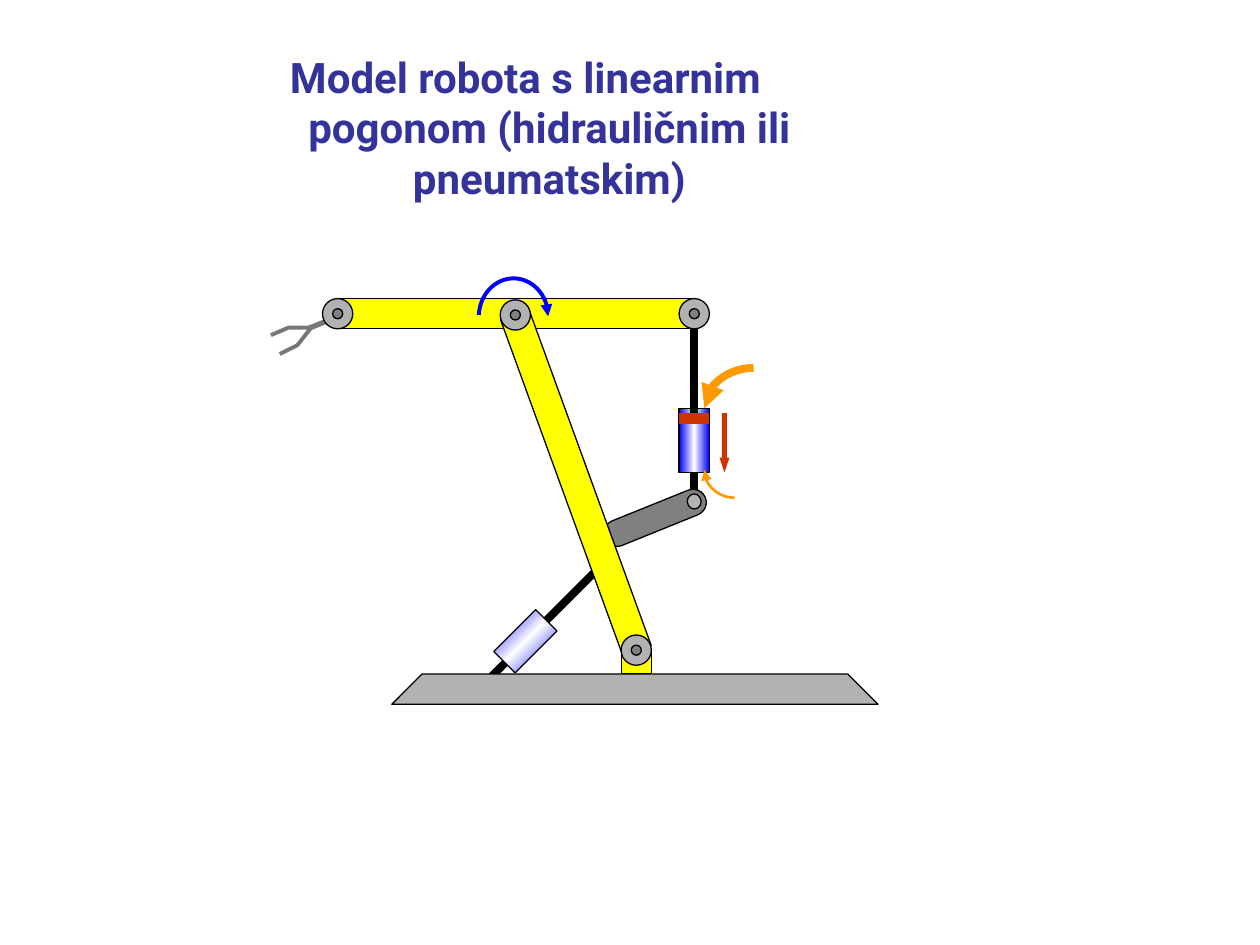
"""Build a slide showing a robot model with linear drive."""
from copy import deepcopy
from dataclasses import dataclass
from typing import Optional

from lxml import etree
from pptx import Presentation
from pptx.dml.color import RGBColor
from pptx.enum.shapes import MSO_CONNECTOR, MSO_SHAPE
from pptx.enum.text import PP_ALIGN
from pptx.oxml.ns import qn
from pptx.util import Inches, Pt

RECT = MSO_SHAPE.RECTANGLE
ROUNDED = MSO_SHAPE.ROUNDED_RECTANGLE
OVAL = MSO_SHAPE.OVAL
DOWN_ARROW = MSO_SHAPE.DOWN_ARROW
STRAIGHT = MSO_CONNECTOR.STRAIGHT
CENTER = PP_ALIGN.CENTER

COLORS = {
    "title": "333399", "outline": "000000", "arm": "FFFF00", "metal": "B2B2B2",
    "dark": "808080", "gripper": "777777", "piston": "CC3300", "flow": "FF9900",
    "blue": "0000FF", "white": "FFFFFF",
}
TITLE = "Model robota s linearnim pogonom (hidrauličnim ili pneumatskim)"
Point = tuple[float, float]


@dataclass
class Rod:
    start: Point
    end: Point
    width: float = 4.5
    color: str = "outline"


@dataclass
class Part:
    center: Point
    width: float
    height: float
    fill: Optional[str] = None
    angle: float = 0
    kind: MSO_SHAPE = RECT
    outlined: bool = True
    adjustments: tuple[float, ...] = ()


@dataclass
class Curve:
    start: Point
    segments: list[tuple[Point, Point, Point]]
    color: str
    width: float


LINK_RODS = [Rod((5.51, 2.53), (5.51, 3.32)), Rod((5.39, 3.32), (5.63, 3.32), 6, "piston"),
             Rod((4.09, 5.18), (3.87, 5.4))]
LOWER_RODS = [Rod((4.77, 4.49), (4.05, 5.21)), Rod((3.97, 5.13), (4.13, 5.3), 6, "dark")]
GRIPPER = [(2.15, 2.66), (2.29, 2.6), (2.47, 2.6), (2.36, 2.74), (2.22, 2.81)]
BASE = [(3.35, 5.35), (6.73, 5.35), (6.97, 5.59), (3.11, 5.59)]
INFLOW = Curve((5.98, 2.92), [((5.77, 2.92), (5.59, 3.07), (5.59, 3.24))], "flow", 4.5)
OUTFLOW = Curve((5.83, 3.95), [((5.7, 3.95), (5.59, 3.85), (5.59, 3.73))], "flow", 1.5)
ROTATION = Curve((3.8, 2.5), [((3.81, 2.34), (3.92, 2.22), (4.06, 2.21)),
                              ((4.21, 2.2), (4.35, 2.33), (4.35, 2.51))], "blue", 2.25)


def rgb(name: str) -> RGBColor:
    return RGBColor.from_string(COLORS[name])


def set_line(shape, color: str, width: float) -> None:
    shape.line.color.rgb = rgb(color)
    shape.line.width = Pt(width)


def add_rod(shapes, rod: Rod) -> None:
    ends = [Inches(value) for value in (*rod.start, *rod.end)]
    connector = shapes.add_connector(STRAIGHT, *ends)
    set_line(connector, rod.color, rod.width)
    etree.SubElement(connector._element.spPr, qn("a:effectLst"))


def fill_cylinder(shape) -> None:
    shape.fill.gradient()
    shape.fill.gradient_angle = 0
    stop_list = shape._element.spPr.find(".//" + qn("a:gsLst"))
    stop_list.append(deepcopy(stop_list[-1]))
    stops = zip(shape.fill.gradient_stops, (0, 0.5, 1), ("blue", "white", "blue"))
    for stop, position, color in stops:
        stop.position = position
        stop.color.rgb = rgb(color)


def add_part(shapes, part: Part) -> None:
    x, y = part.center
    shape = shapes.add_shape(part.kind, Inches(x - part.width / 2), Inches(y - part.height / 2),
                             Inches(part.width), Inches(part.height))
    shape.shadow.inherit = False
    shape.rotation = part.angle
    for index, value in enumerate(part.adjustments):
        shape.adjustments[index] = value
    if part.fill:
        shape.fill.solid()
        shape.fill.fore_color.rgb = rgb(part.fill)
    else:
        fill_cylinder(shape)
    if part.outlined:
        set_line(shape, "outline", 0.75)
    else:
        shape.line.fill.background()


def add_joint(shapes, center: Point) -> None:
    for size, color in ((0.24, "metal"), (0.08, "dark")):
        add_part(shapes, Part(center, size, size, color, kind=OVAL))


def add_outline(shapes, points: list[Point], color: str, width: float,
                fill: Optional[str] = None):
    corners = [(Inches(x), Inches(y)) for x, y in points]
    builder = shapes.build_freeform(*corners[0], scale=1.0)
    builder.add_line_segments(corners[1:], close=fill is not None)
    shape = builder.convert_to_shape()
    shape.shadow.inherit = False
    if fill:
        shape.fill.solid()
        shape.fill.fore_color.rgb = rgb(fill)
    else:
        shape.fill.background()
    set_line(shape, color, width)
    return shape


def bezier(start: Point, segment: tuple[Point, Point, Point], steps: int = 24) -> list[Point]:
    def at(t: float) -> Point:
        weights = ((1 - t) ** 3, 3 * t * (1 - t) ** 2, 3 * t * t * (1 - t), t ** 3)
        x, y = (sum(w * v for w, v in zip(weights, axis)) for axis in zip(start, *segment))
        return x, y
    return [at(step / steps) for step in range(1, steps + 1)]


def add_curved_arrow(shapes, curve: Curve) -> None:
    points = [curve.start]
    for segment in curve.segments:
        points += bezier(points[-1], segment)
    shape = add_outline(shapes, points, curve.color, curve.width)
    line = shape._element.spPr.find(qn("a:ln"))
    etree.SubElement(line, qn("a:tailEnd"), type="triangle")


def add_title(shapes) -> None:
    frame = shapes.add_textbox(Inches(1.53), Inches(0.36), Inches(5.28), Inches(1.34)).text_frame
    frame.word_wrap = True
    paragraph = frame.paragraphs[0]
    paragraph.alignment = CENTER
    paragraph.space_before = Pt(4.8)
    properties = paragraph._p.get_or_add_pPr()
    properties.set("marL", str(Inches(0.38)))
    properties.set("indent", str(Inches(-0.38)))
    run = paragraph.add_run()
    run.text = TITLE
    run.font.name = "Roboto"
    run.font.size = Pt(24)
    run.font.bold = True
    run.font.color.rgb = rgb("title")


def main() -> None:
    presentation = Presentation()
    presentation.slide_width, presentation.slide_height = Inches(10), Inches(7.5)
    shapes = presentation.slides.add_slide(presentation.slide_layouts[6]).shapes

    add_rod(shapes, Rod((5.51, 3.71), (5.51, 4.03)))
    add_part(shapes, Part((5.51, 3.495), 0.24, 0.51))
    for rod in LINK_RODS:
        add_rod(shapes, rod)
    add_outline(shapes, GRIPPER, "gripper", 2.25)
    add_rod(shapes, Rod((2.44, 2.61), (2.64, 2.53), 3, "gripper"))
    add_part(shapes, Part((5.05, 5.26), 0.18, 0.24, "arm", 90))
    add_part(shapes, Part((4.1, 2.49), 2.84, 0.24, "arm"))
    for center in ((2.68, 2.49), (5.51, 2.49)):
        add_joint(shapes, center)
    add_outline(shapes, BASE, "outline", 0.75, "metal")
    for rod in LOWER_RODS:
        add_rod(shapes, rod)
    add_part(shapes, Part((5.2, 4.11), 0.86, 0.21, "dark", 338, ROUNDED, adjustments=(0.5,)))
    add_part(shapes, Part((5.51, 3.98), 0.11, 0.12, "metal", 355.6, OVAL))
    add_part(shapes, Part((4.57, 3.83), 2.84, 0.24, "arm", 70))
    for center in ((4.09, 2.5), (5.05, 5.16)):
        add_joint(shapes, center)
    for curve in (INFLOW, OUTFLOW):
        add_curved_arrow(shapes, curve)
    add_part(shapes, Part((4.17, 5.09), 0.24, 0.47, angle=45))
    add_curved_arrow(shapes, ROTATION)
    add_title(shapes)
    add_part(shapes, Part((5.75, 3.515), 0.08, 0.47, "piston", kind=DOWN_ARROW,
                          outlined=False, adjustments=(0.5, 1.48)))
    presentation.save("out.pptx")


if __name__ == "__main__":
    main()
